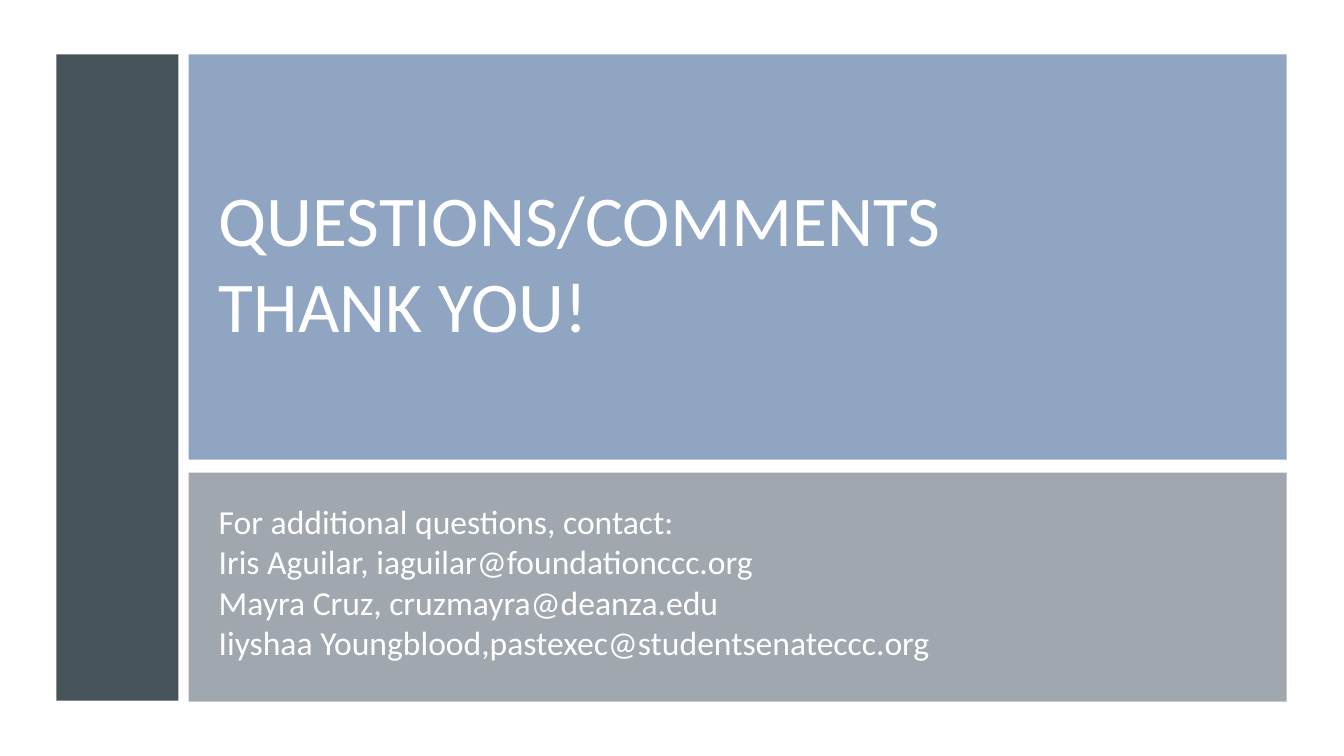
from lxml.etree import SubElement
from pptx import Presentation
from pptx.dml.color import RGBColor
from pptx.enum.shapes import MSO_SHAPE
from pptx.enum.text import MSO_ANCHOR, MSO_AUTO_SIZE, PP_ALIGN
from pptx.oxml.ns import qn
from pptx.util import Inches, Pt

COLORS = {"background": "FFFFFF", "sidebar": "465359", "heading": "8FA5C2",
          "contacts": "89929B", "text": "FFFFFF"}
FONT = "Calibri"
INDENT, TOP_INSET = 0.2, 0.23
TEXT_WIDTH = 8.28

HEADING = ["QUESTIONS/COMMENTS", "THANK YOU!"]
CONTACTS = [
    "For additional questions, contact:",
    "Iris Aguilar, iaguilar@foundationccc.org",
    "Mayra Cruz, cruzmayra@deanza.edu",
    "Iiyshaa Youngblood,pastexec@studentsenateccc.org",
]


def add_panel(slide, box, color, opacity=100):
    panel = slide.shapes.add_shape(MSO_SHAPE.RECTANGLE, *map(Inches, box))
    panel.shadow.inherit = False
    panel.fill.solid()
    panel.fill.fore_color.rgb = RGBColor.from_string(COLORS[color])
    panel.line.fill.background()
    if opacity < 100:
        srgb = panel.fill._xPr.find(f".//{qn('a:srgbClr')}")
        SubElement(srgb, qn("a:alpha")).set("val", str(opacity * 1000))
    return panel


def write_lines(frame, lines, size, anchor):
    frame.word_wrap = True
    frame.auto_size = MSO_AUTO_SIZE.NONE
    frame.vertical_anchor = anchor
    frame.text = "\n".join(lines)
    for paragraph in frame.paragraphs:
        paragraph.alignment = PP_ALIGN.LEFT
        paragraph.space_before = Pt(0)
        paragraph.font.name = FONT
        paragraph.font.size = Pt(size)
        paragraph.font.color.rgb = RGBColor.from_string(COLORS["text"])


def add_heading(slide, box):
    left, top, _, _ = box
    panel = add_panel(slide, box, "heading")
    title = slide.shapes.title
    title.left, title.top = Inches(left + INDENT), Inches(top + TOP_INSET)
    title.width, title.height = Inches(TEXT_WIDTH), Inches(3.64)
    write_lines(title.text_frame, HEADING, 51, MSO_ANCHOR.MIDDLE)
    panel._element.addnext(title._element)


def add_contacts(slide, box):
    left, top, _, _ = box
    add_panel(slide, box, "contacts", opacity=80)
    details = slide.shapes.add_textbox(
        Inches(left + INDENT), Inches(top + TOP_INSET),
        Inches(TEXT_WIDTH), Inches(1.79))
    write_lines(details.text_frame, CONTACTS, 24, MSO_ANCHOR.TOP)


def main():
    presentation = Presentation()
    presentation.slide_width = Inches(13.33)
    presentation.slide_height = Inches(7.5)
    slide = presentation.slides.add_slide(presentation.slide_layouts[5])
    slide.background.fill.solid()
    slide.background.fill.fore_color.rgb = RGBColor.from_string(COLORS["background"])

    add_panel(slide, (0.56, 0.54, 1.21, 6.41), "sidebar")
    add_heading(slide, (1.87, 0.54, 10.89, 4.02))
    add_contacts(slide, (1.87, 4.69, 10.89, 2.27))
    presentation.save("out.pptx")


if __name__ == "__main__":
    main()
